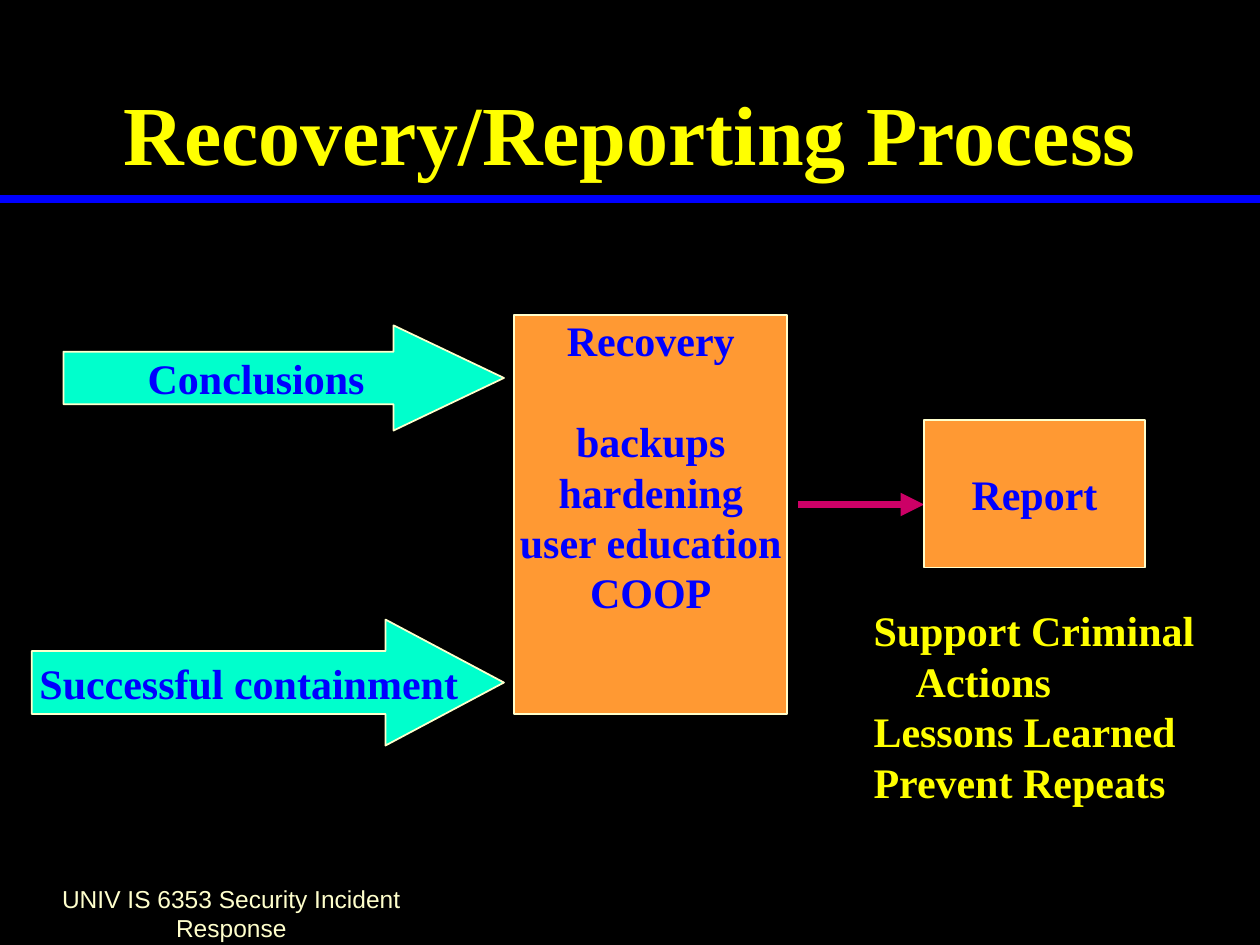
from lxml.etree import SubElement
from pptx import Presentation
from pptx.dml.color import RGBColor
from pptx.enum.shapes import MSO_CONNECTOR, MSO_SHAPE
from pptx.enum.text import MSO_ANCHOR, PP_ALIGN
from pptx.oxml.ns import qn
from pptx.util import Cm, Pt

COLORS = {
    "background": "000000",
    "blue": "0000FF",
    "yellow": "FFFF00",
    "cream": "FFFFCC",
    "mint": "00FFCC",
    "orange": "FF9933",
    "magenta": "CC0066",
}
SERIF = "Times New Roman"
LINE_PITCH = 28.8


def color(name):
    return RGBColor.from_string(COLORS[name])


def write_text(tf, lines, ink, size=24, font=SERIF, bold=True,
               align=PP_ALIGN.CENTER, anchor=MSO_ANCHOR.MIDDLE, wrap=False):
    tf.text = "\n".join(lines)
    tf.word_wrap = wrap
    tf.vertical_anchor = anchor
    for p in tf.paragraphs:
        p.alignment = align
        for r in p.runs:
            r.font.name = font
            r.font.size = Pt(size)
            r.font.bold = bold
            r.font.color.rgb = color(ink)


def set_pitch(tf):
    for p in tf.paragraphs:
        p.line_spacing = Pt(LINE_PITCH)


def add_block(s, kind, box, fill, lines, **style):
    sp = s.shapes.add_shape(kind, *map(Cm, box))
    sp.shadow.inherit = False
    sp.fill.solid()
    sp.fill.fore_color.rgb = color(fill)
    sp.line.color.rgb = color("cream")
    sp.line.width = Pt(1)
    write_text(sp.text_frame, lines, "blue", **style)
    return sp


def add_line(s, x1, y1, x2, y2, ink, arrow=False):
    c = s.shapes.add_connector(MSO_CONNECTOR.STRAIGHT, *map(Cm, (x1, y1, x2, y2)))
    c.line.color.rgb = color(ink)
    c.line.width = Pt(4.5)
    if arrow:
        SubElement(c.line._get_or_add_ln(), qn("a:tailEnd"), type="triangle")
    SubElement(c._element.spPr, qn("a:effectLst"))


def add_header(s, box):
    x, y, w, h = box
    add_line(s, x, y + h, x + w, y + h, "blue")
    title = s.shapes.title
    margin = 1.9
    title.left, title.top = Cm(x + margin), Cm(y + 0.5)
    title.width, title.height = Cm(w - 2 * margin), Cm(3.3)
    write_text(title.text_frame, ["Recovery/Reporting Process"], "yellow",
               size=48, anchor=MSO_ANCHOR.BOTTOM, wrap=True)


def add_footer(s, box):
    sp = s.shapes.add_textbox(*map(Cm, box))
    write_text(sp.text_frame, ["UNIV IS 6353 Security Incident Response"],
               "cream", size=14, font="Arial", bold=False)


def add_inputs(s, box):
    x, y, w, h = box
    inputs = [
        ("Conclusions", 0.64, 0, 2.12, 1.05, 0.25),
        ("Successful containment", 0, h - 2.54, 2.54, 0.94, 0.68),
    ]
    for label, dx, dy, height, head, inset in inputs:
        sp = add_block(s, MSO_SHAPE.RIGHT_ARROW, (x + dx, y + dy, w - dx, height),
                       "mint", [label])
        sp.adjustments[0] = 0.5
        sp.adjustments[1] = head
        sp.text_frame.margin_left = Cm(inset)


def add_recovery(s, box):
    steps = ["Recovery", "backups", "hardening", "user education", "COOP"]
    sp = add_block(s, MSO_SHAPE.RECTANGLE, box, "orange", steps,
                   anchor=MSO_ANCHOR.TOP)
    tf = sp.text_frame
    tf.margin_top = 0
    set_pitch(tf)
    tf.paragraphs[0].space_after = Pt(LINE_PITCH)


def add_report(s, box):
    x, y, w, h = box
    report_x, report_w, report_h = 2.54, 4.45, 2.97
    add_line(s, x, y + 1.7, x + report_x, y + 1.7, "magenta", arrow=True)
    add_block(s, MSO_SHAPE.RECTANGLE, (x + report_x, y, report_w, report_h),
              "orange", ["Report"])

    goals_x, goals_y = 1.27, 3.6
    goals = s.shapes.add_textbox(Cm(x + goals_x), Cm(y + goals_y),
                                 Cm(w - goals_x), Cm(h - goals_y))
    lines = ["Support Criminal", "Actions", "Lessons Learned", "Prevent Repeats"]
    tf = goals.text_frame
    write_text(tf, lines, "yellow", align=PP_ALIGN.LEFT, anchor=MSO_ANCHOR.TOP)
    set_pitch(tf)
    tf.paragraphs[1]._p.get_or_add_pPr().set("marL", str(Cm(0.85)))


def main():
    prs = Presentation()
    prs.slide_width, prs.slide_height = Cm(25.4), Cm(19.05)
    s = prs.slides.add_slide(prs.slide_layouts[5])
    s.background.fill.solid()
    s.background.fill.fore_color.rgb = color("background")
    add_header(s, (0, 0, 25.4, 4.02))
    add_footer(s, (0.64, 17.78, 8.05, 1.27))
    add_inputs(s, (0.64, 6.56, 9.52, 8.47))
    add_recovery(s, (10.37, 6.35, 5.5, 8.05))
    add_report(s, (16.09, 8.47, 8.46, 8.93))
    prs.save("out.pptx")


if __name__ == "__main__":
    main()
